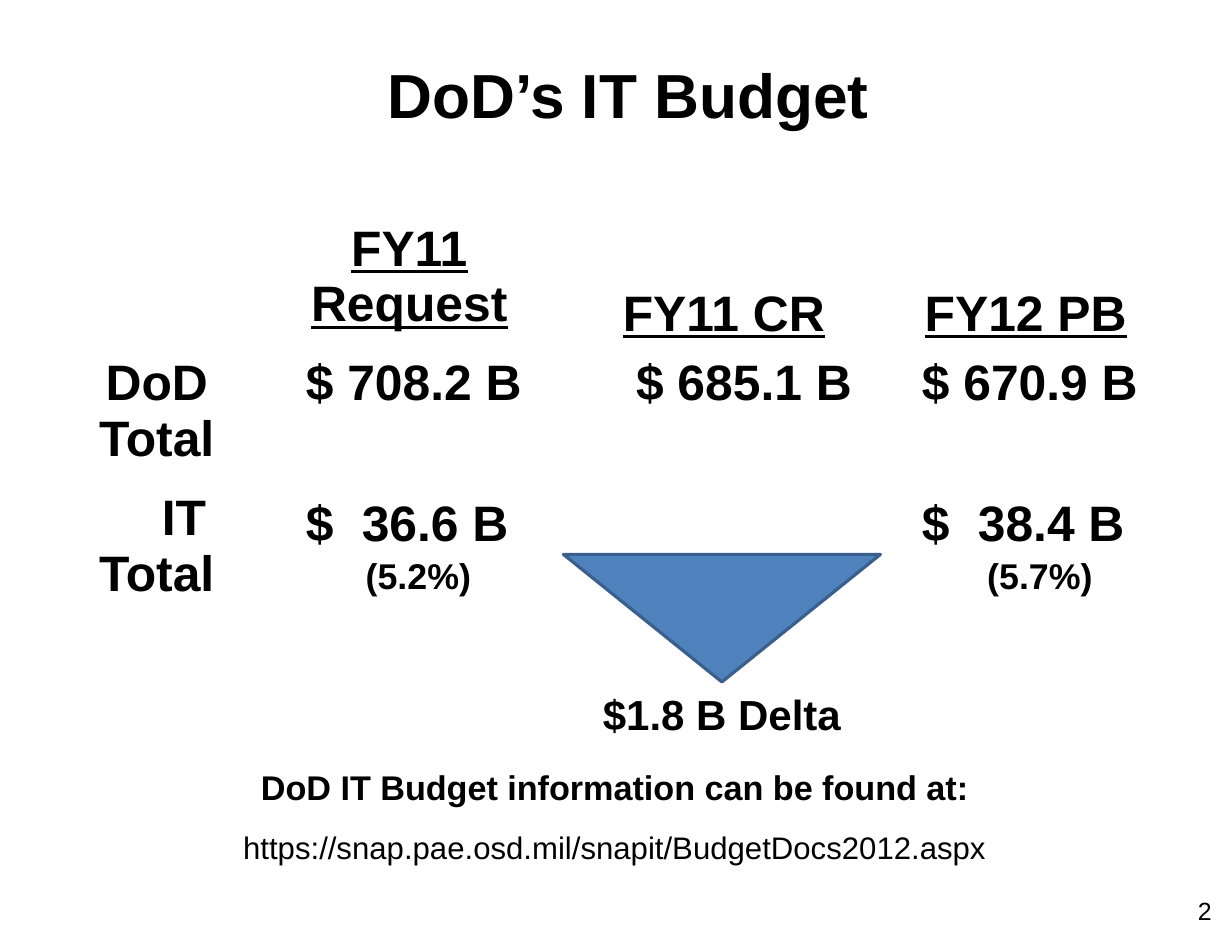
from pptx import Presentation
from pptx.dml.color import RGBColor
from pptx.enum.shapes import MSO_SHAPE
from pptx.enum.text import MSO_ANCHOR as ANCHOR, PP_ALIGN as ALIGN
from pptx.oxml.ns import qn
from pptx.util import Pt
from lxml import etree

COLORS = {"text": "000000", "fill": "4F81BD", "line": "3A5F8C"}
FONT = "Arial"
INSET_X, INSET_Y = 8.6, 4.3


def color(name):
    return RGBColor.from_string(COLORS[name])


def write(tf, text, size=32, bold=True, underline=False, align=ALIGN.LEFT,
          before=0, after=0, left=0, indent=0, tab=None):
    p = tf.paragraphs[0]
    if p.runs:
        p = tf.add_paragraph()
    p.alignment = align
    p.space_before, p.space_after = Pt(before), Pt(after)
    pPr = p._p.get_or_add_pPr()
    pPr.set("marL", str(Pt(left)))
    pPr.set("indent", str(Pt(indent)))
    if tab:
        tabs = etree.SubElement(pPr, qn("a:tabLst"))
        etree.SubElement(tabs, qn("a:tab"), pos=str(Pt(tab)), algn="l")
    r = p.add_run()
    r.text = text
    r.font.name, r.font.size = FONT, Pt(size)
    r.font.bold, r.font.underline = bold, underline
    r.font.color.rgb = color("text")


def set_frame(tf, anchor=ANCHOR.TOP):
    tf.word_wrap = True
    tf.vertical_anchor = anchor
    tf.margin_left = tf.margin_right = Pt(8)
    tf.margin_top = tf.margin_bottom = Pt(4)


def add_text(slide, box):
    tf = slide.shapes.add_textbox(*map(Pt, box)).text_frame
    set_frame(tf)
    return tf


def add_title(slide, box):
    sp = slide.shapes.title
    sp.left, sp.top, sp.width, sp.height = map(Pt, box)
    set_frame(sp.text_frame, ANCHOR.MIDDLE)
    write(sp.text_frame, "DoD’s IT Budget ", size=40, align=ALIGN.CENTER)


def add_amount(cell, text, left, percent=None, percent_left=0):
    cell.margin_left = Pt(INSET_X + left)
    cell.margin_right = 0
    write(cell.text_frame, text, tab=44.5)
    if percent:
        cell.vertical_anchor = ANCHOR.MIDDLE
        write(cell.text_frame, percent, size=23, before=3.5, left=percent_left)


def add_budget_table(slide, box):
    table = slide.shapes.add_table(3, 4, *map(Pt, box)).table
    table.first_row = table.horz_banding = False
    for column, width in zip(table.columns, (122.4, 202.3, 202.3, 185.8)):
        column.width = Pt(width)
    for row, height in zip(table.rows, (92.2, 84.2, 86.4)):
        row.height = Pt(height)
    for cell in table.iter_cells():
        cell.fill.background()
        cell.margin_left = cell.margin_right = Pt(INSET_X)
        cell.margin_top = cell.margin_bottom = Pt(INSET_Y)

    headers = (("FY11 Request", ANCHOR.MIDDLE), ("FY11 CR", ANCHOR.BOTTOM),
               ("FY12 PB", ANCHOR.BOTTOM))
    for col, (text, anchor) in enumerate(headers, 1):
        cell = table.cell(0, col)
        cell.vertical_anchor = anchor
        write(cell.text_frame, text, underline=True, align=ALIGN.CENTER)

    write(table.cell(1, 0).text_frame, "DoD Total", align=ALIGN.CENTER)
    it_label = table.cell(2, 0)
    it_label.vertical_anchor = ANCHOR.MIDDLE
    write(it_label.text_frame, "IT Total", align=ALIGN.CENTER, indent=35)

    lefts = {1: 26, 2: 36, 3: 17.5}
    for col, text in enumerate(("$ 708.2 B", "$ 685.1 B", "$ 670.9 B"), 1):
        add_amount(table.cell(1, col), text, lefts[col])
    add_amount(table.cell(2, 1), "$\t36.6 B", lefts[1], "(5.2%)", 38.5)
    add_amount(table.cell(2, 3), "$\t38.4 B", lefts[3], "(5.7%)", 42)


def add_delta(slide, box):
    x, y, w, h = box
    sp = slide.shapes.add_shape(MSO_SHAPE.FLOWCHART_EXTRACT,
                                Pt(x), Pt(y), Pt(w), Pt(h - 41))
    sp.rotation = 180
    sp.shadow.inherit = False
    sp.fill.solid()
    sp.fill.fore_color.rgb = color("fill")
    sp.line.color.rgb = color("line")
    sp.line.width = Pt(2)
    tf = add_text(slide, (x + 3, y + h - 41, w - 6, 41))
    write(tf, "$1.8 B Delta", size=27, align=ALIGN.CENTER)


def add_source(slide, box):
    tf = add_text(slide, box)
    write(tf, "DoD IT Budget information can be found at:", size=22,
          align=ALIGN.CENTER, after=13)
    write(tf, "https://snap.pae.osd.mil/snapit/BudgetDocs2012.aspx", size=20,
          bold=False, align=ALIGN.CENTER)


def add_page_number(slide, box):
    write(add_text(slide, box), "2", size=16, bold=False, align=ALIGN.RIGHT)


def main():
    prs = Presentation()
    prs.slide_width, prs.slide_height = Pt(792), Pt(612)
    slide = prs.slides.add_slide(prs.slide_layouts[5])
    add_budget_table(slide, (39.6, 131.8, 712.8, 262.8))
    add_page_number(slide, (602, 571.7, 185, 20))
    add_title(slide, (118.8, 18, 581, 84.2))
    add_source(slide, (74.9, 488.9, 640.8, 74.2))
    add_delta(slide, (362.2, 356.4, 203.8, 123))
    prs.save("out.pptx")


if __name__ == "__main__":
    main()
